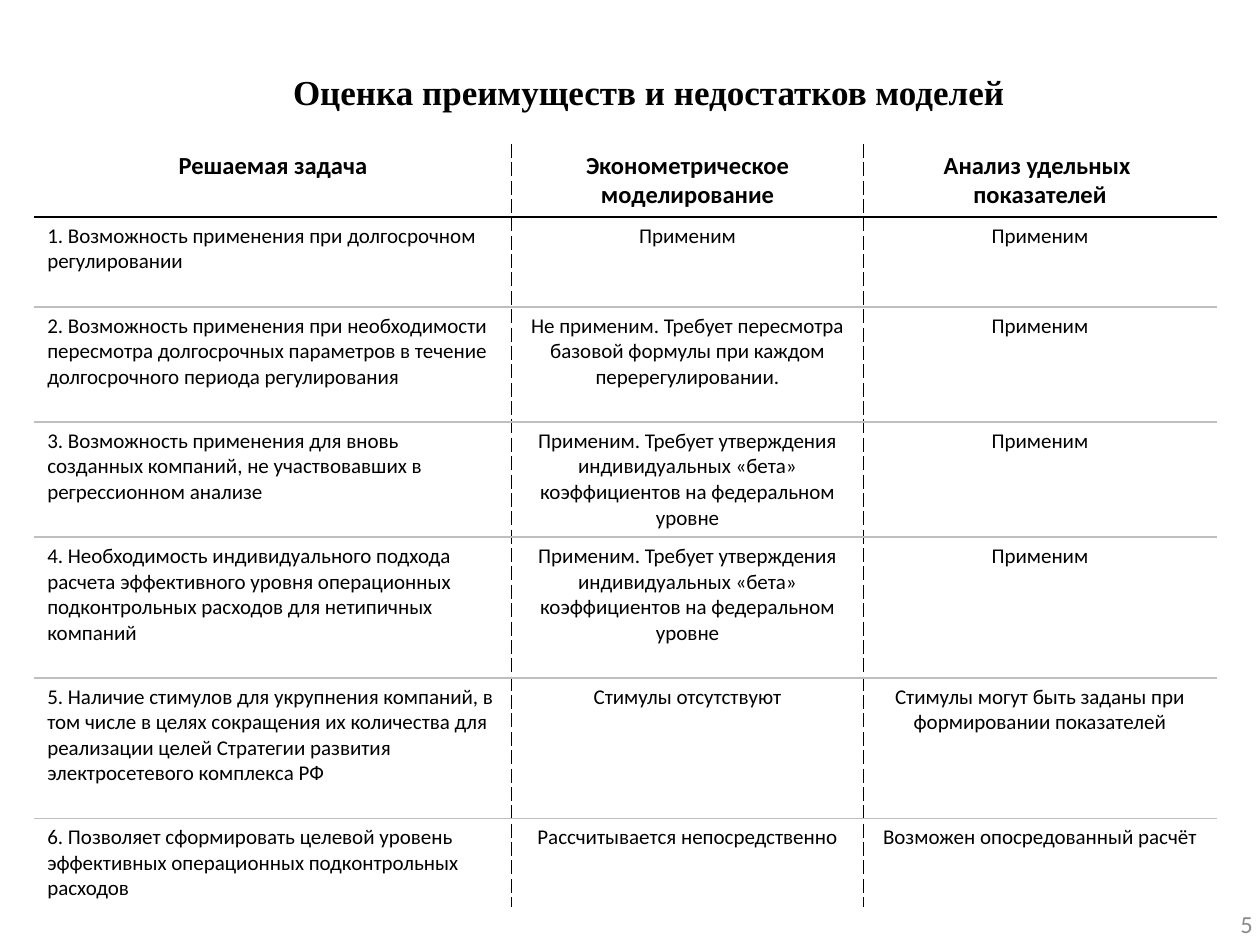
from lxml import etree
from pptx import Presentation
from pptx.dml.color import RGBColor
from pptx.enum.text import MSO_ANCHOR, PP_ALIGN
from pptx.oxml.ns import qn
from pptx.util import Pt

LEFT, CENTER, RIGHT = PP_ALIGN.LEFT, PP_ALIGN.CENTER, PP_ALIGN.RIGHT
MIDDLE = MSO_ANCHOR.MIDDLE
BLACK = RGBColor(0, 0, 0)
WHITE = RGBColor(255, 255, 255)
SILVER = RGBColor(0xBF, 0xBF, 0xBF)
GRAY = RGBColor(0x8C, 0x8C, 0x8C)

# Content: each cell is one text, with a line feed between paragraphs
TITLE = "Оценка преимуществ и недостатков моделей"
PAGE = "5"
BETA = ("Применим. Требует утверждения индивидуальных «бета» "
        "коэффициентов на федеральном уровне")
ROWS = [
    ("Решаемая задача", "Эконометрическое моделирование",
     "Анализ удельных \nпоказателей"),
    ("1. Возможность применения при долгосрочном регулировании",
     "Применим", "Применим"),
    ("2. Возможность применения при необходимости пересмотра долгосрочных "
     "параметров в течение долгосрочного периода регулирования",
     "Не применим. Требует пересмотра базовой формулы при каждом "
     "перерегулировании.", "Применим"),
    ("3. Возможность применения для вновь созданных компаний, не "
     "участвовавших в регрессионном анализе", BETA, "Применим"),
    ("4. Необходимость индивидуального подхода расчета эффективного уровня "
     "операционных подконтрольных расходов для нетипичных компаний",
     BETA, "Применим"),
    ("5. Наличие стимулов для укрупнения компаний, в том числе в целях "
     "сокращения их количества для реализации целей Стратегии развития "
     "электросетевого комплекса РФ", "Стимулы отсутствуют",
     "Стимулы могут быть заданы при формировании показателей"),
    ("6. Позволяет сформировать целевой уровень эффективных операционных "
     "подконтрольных расходов", "Рассчитывается непосредственно",
     "Возможен опосредованный расчёт"),
]
COL_WIDTHS = [272.4, 201.4, 201.4]
ROW_HEIGHTS = [41.4, 51.4, 65.8, 65.8, 80.4, 80.4, 51.2]


def write(tf, text, size, color, align, font="Calibri", bold=False):
    for i, line in enumerate(text.split("\n")):
        p = tf.add_paragraph() if i else tf.paragraphs[0]
        p.alignment = align
        r = p.add_run()
        r.text = line
        r.font.name, r.font.size, r.font.bold = font, Pt(size), bold
        r.font.color.rgb = color


def add_label(s, box, *style, **options):
    tf = s.shapes.add_textbox(*map(Pt, box)).text_frame
    tf.word_wrap = True
    tf.vertical_anchor = MIDDLE
    write(tf, *style, **options)


def set_borders(cell, **edges):
    """Edges come in schema order and go before the cell fill."""
    tc_pr = cell._tc.get_or_add_tcPr()
    for i, (edge, (color, dash)) in enumerate(edges.items()):
        ln = etree.Element(qn("a:" + edge), w=str(Pt(1)))
        fill = etree.SubElement(ln, qn("a:solidFill"))
        etree.SubElement(fill, qn("a:srgbClr"), val=str(color))
        etree.SubElement(ln, qn("a:prstDash"), val=dash)
        tc_pr.insert(i, ln)


prs = Presentation()
prs.slide_width, prs.slide_height = Pt(720), Pt(540)
s = prs.slides.add_slide(prs.slide_layouts[6])

# Title
add_label(s, (46.8, 20.9, 648, 62.6), TITLE, 20, BLACK, CENTER,
          font="Times New Roman", bold=True)

# Comparison table
n_rows, n_cols = len(ROWS), len(COL_WIDTHS)
table = s.shapes.add_table(n_rows, n_cols, Pt(19.8), Pt(82.6),
                           Pt(sum(COL_WIDTHS)), Pt(sum(ROW_HEIGHTS))).table
table.horz_banding = False
for column, width in zip(table.columns, COL_WIDTHS):
    column.width = Pt(width)
for row, height in zip(table.rows, ROW_HEIGHTS):
    row.height = Pt(height)

# Borders by grid line: white outside, black under the header, dashes between columns
h_lines = [(c, "solid") for c in [WHITE, BLACK] + [SILVER] * (n_rows - 2) + [WHITE]]
outer = (WHITE, "solid")
v_lines = [outer] + [(BLACK, "lgDash")] * (n_cols - 1) + [outer]
for i, texts in enumerate(ROWS):
    for j, text in enumerate(texts):
        cell = table.cell(i, j)
        cell.fill.background()
        set_borders(cell, lnL=v_lines[j], lnR=v_lines[j + 1],
                    lnT=h_lines[i], lnB=h_lines[i + 1])
        header = i == 0
        write(cell.text_frame, text, 14 if header else 12, BLACK,
              CENTER if header or j else LEFT, bold=header)

# Page number
add_label(s, (555.1, 513.4, 167.8, 28.8), PAGE, 14, GRAY, RIGHT)

prs.save("out.pptx")
